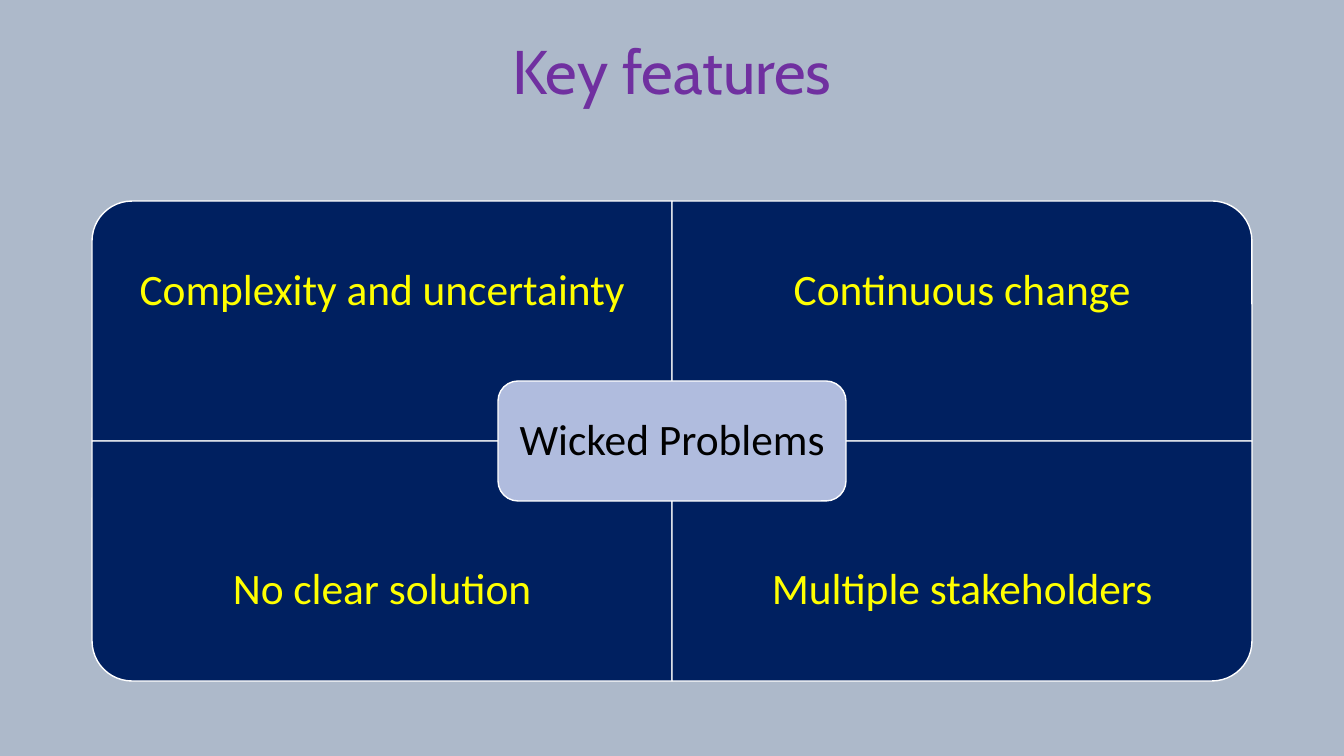
from pptx import Presentation
from pptx import util as u
from pptx.dml.color import RGBColor
from pptx.enum import shapes, text

PX = 914400 / 100.8
COLORS = {
    "background": "ADB9CA",
    "title": "7030A0",
    "panel": "002060",
    "feature": "FFFF00",
    "hub": "B0BCDE",
    "hub_text": "000000",
    "outline": "FFFFFF",
}
CENTER_X, CENTER_Y = 672, 441
PANEL_WIDTH, PANEL_HEIGHT = 580, 240
HUB_WIDTH, HUB_HEIGHT = 348, 120
FEATURES = [
    ("Complexity and uncertainty", 0, 0, 270),
    ("Continuous change", 1, 0, 0),
    ("No clear solution", 0, 1, 180),
    ("Multiple stakeholders", 1, 1, 90),
]


def px(*lengths):
    return [u.Emu(round(length * PX)) for length in lengths]


def color(name):
    return RGBColor.from_string(COLORS[name])


def write_text(frame, words, font, size, color_name):
    frame.word_wrap = True
    frame.auto_size = text.MSO_AUTO_SIZE.NONE
    frame.vertical_anchor = text.MSO_ANCHOR.MIDDLE
    para = frame.paragraphs[0]
    para.alignment = text.PP_ALIGN.CENTER
    para.line_spacing = 0.9
    span = para.add_run()
    span.text = words
    span.font.name = font
    span.font.size = u.Pt(size)
    span.font.color.rgb = color(color_name)


def set_margins(frame, margin):
    frame.margin_left = frame.margin_right = px(margin)[0]
    frame.margin_top = frame.margin_bottom = px(margin)[0]


def add_title(page, words):
    title = page.shapes.title
    title.left, title.top, title.width, title.height = px(92, 2, 1160, 146)
    write_text(title.text_frame, words, "Cabin", 44, "title")


def add_block(page, kind, left, top, width, height, fill):
    block = page.shapes.add_shape(kind, *px(left, top, width, height))
    block.shadow.inherit = False
    block.fill.solid()
    block.fill.fore_color.rgb = color(fill)
    block.line.color.rgb = color("outline")
    block.line.width = u.Pt(1)
    return block


def add_panel(page, words, column, row, rotation):
    left = CENTER_X + (column - 1) * PANEL_WIDTH
    top = CENTER_Y + (row - 1) * PANEL_HEIGHT
    width, height = PANEL_WIDTH, PANEL_HEIGHT
    if rotation % 180:
        width, height = height, width
    panel = add_block(
        page,
        shapes.MSO_SHAPE.ROUND_1_RECTANGLE,
        left + (PANEL_WIDTH - width) / 2,
        top + (PANEL_HEIGHT - height) / 2,
        width,
        height,
        "panel",
    )
    panel.rotation = rotation
    hub_overlap = HUB_HEIGHT // 2
    box = page.shapes.add_textbox(
        *px(left, top + row * hub_overlap, PANEL_WIDTH, PANEL_HEIGHT - hub_overlap)
    )
    set_margins(box.text_frame, 24)
    write_text(box.text_frame, words, "Calibri", 31, "feature")


def add_hub(page, words):
    hub = add_block(
        page,
        shapes.MSO_SHAPE.ROUNDED_RECTANGLE,
        CENTER_X - HUB_WIDTH // 2,
        CENTER_Y - HUB_HEIGHT // 2,
        HUB_WIDTH,
        HUB_HEIGHT,
        "hub",
    )
    set_margins(hub.text_frame, 13)
    write_text(hub.text_frame, words, "Calibri", 31, "hub_text")


def main():
    deck = Presentation()
    deck.slide_width, deck.slide_height = px(1344, 756)
    page = deck.slides.add_slide(deck.slide_layouts[5])
    page.background.fill.solid()
    page.background.fill.fore_color.rgb = color("background")
    add_title(page, "Key features")
    for feature in FEATURES:
        add_panel(page, *feature)
    add_hub(page, "Wicked Problems")
    deck.save("out.pptx")


if __name__ == "__main__":
    main()
